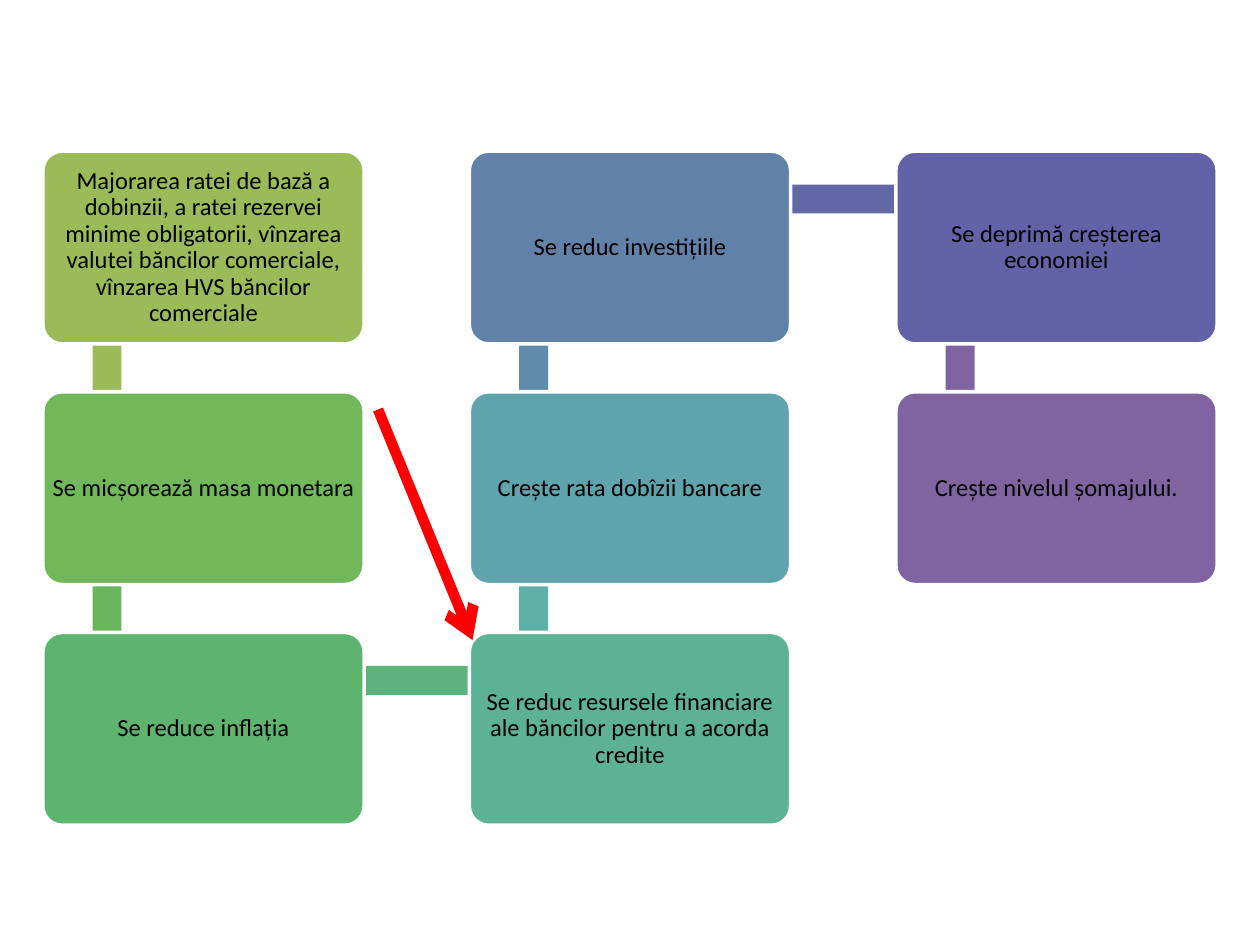
from dataclasses import dataclass
from itertools import zip_longest

import pptx
import pptx.dml.color
import pptx.enum.shapes
import pptx.enum.text
import pptx.oxml
import pptx.oxml.ns
import pptx.slide
import pptx.util

RGBColor = pptx.dml.color.RGBColor
Inches = pptx.util.Inches
Pt = pptx.util.Pt
ShapeKind = pptx.enum.shapes.MSO_SHAPE

BLACK = RGBColor(0x00, 0x00, 0x00)
WHITE = RGBColor(0xFF, 0xFF, 0xFF)
RED = RGBColor(0xFF, 0x00, 0x00)
OLIVE = RGBColor(0x9B, 0xBB, 0x59)
LEAF = RGBColor(0x70, 0xB8, 0x5A)
LEAF_LINK = RGBColor(0x69, 0xB7, 0x5B)
GREEN = RGBColor(0x5C, 0xB4, 0x6F)
GREEN_LINK = RGBColor(0x5C, 0xB3, 0x7C)
JADE = RGBColor(0x5D, 0xB1, 0x95)
JADE_LINK = RGBColor(0x5E, 0xAF, 0xA6)
TEAL = RGBColor(0x5F, 0xA4, 0xAD)
TEAL_LINK = RGBColor(0x60, 0x8C, 0xAB)
STEEL = RGBColor(0x61, 0x81, 0xA9)
STEEL_LINK = RGBColor(0x62, 0x67, 0xA6)
INDIGO = RGBColor(0x63, 0x62, 0xA6)
PURPLE = RGBColor(0x80, 0x64, 0xA2)

# Grid of steps, in inches
GRID_LEFT, GRID_TOP = 0.34, 1.2
COLUMN_PITCH, ROW_PITCH = 3.385, 1.91
STEP_WIDTH, STEP_HEIGHT = 2.55, 1.53
# Point inside each step where its links start and end
ANCHOR_X, ANCHOR_Y = 0.51, 0.38
LINK_THICKNESS = 0.23


@dataclass(frozen=True)
class Step:
    column: int
    row: int
    text: str
    fill: RGBColor
    link_fill: RGBColor = PURPLE

    @property
    def left(self) -> float:
        return GRID_LEFT + self.column * COLUMN_PITCH

    @property
    def top(self) -> float:
        return GRID_TOP + self.row * ROW_PITCH


STEPS = (
    Step(0, 0, "Majorarea ratei de bază a dobinzii, a ratei rezervei minime "
         "obligatorii, vînzarea valutei băncilor comerciale, vînzarea HVS "
         "băncilor comerciale", OLIVE, OLIVE),
    Step(0, 1, "Se micșorează masa monetara", LEAF, LEAF_LINK),
    Step(0, 2, "Se reduce inflația", GREEN, GREEN_LINK),
    Step(1, 2, "Se reduc resursele financiare ale băncilor pentru a acorda credite",
         JADE, JADE_LINK),
    Step(1, 1, "Crește rata dobîzii bancare", TEAL, TEAL_LINK),
    Step(1, 0, "Se reduc investițiile", STEEL, STEEL_LINK),
    Step(2, 0, "Se deprimă creșterea economiei", INDIGO, PURPLE),
    Step(2, 1, "Crește nivelul șomajului.", PURPLE),
)


def draw_link(slide: pptx.slide.Slide, start: Step, end: Step) -> None:
    """Draw the bar between the anchors of two neighbouring steps."""
    left = min(start.left, end.left) + ANCHOR_X
    top = min(start.top, end.top) + ANCHOR_Y
    if start.row == end.row:
        top -= LINK_THICKNESS / 2
        width, height = COLUMN_PITCH, LINK_THICKNESS
    else:
        left -= LINK_THICKNESS / 2
        width, height = LINK_THICKNESS, ROW_PITCH
    bar = slide.shapes.add_shape(
        ShapeKind.RECTANGLE, Inches(left), Inches(top), Inches(width), Inches(height))
    bar.shadow.inherit = False
    bar.fill.solid()
    bar.fill.fore_color.rgb = start.link_fill
    bar.line.fill.background()


def draw_step(slide: pptx.slide.Slide, step: Step) -> None:
    box = slide.shapes.add_shape(
        ShapeKind.ROUNDED_RECTANGLE, Inches(step.left), Inches(step.top),
        Inches(STEP_WIDTH), Inches(STEP_HEIGHT))
    box.adjustments[0] = 0.1
    box.shadow.inherit = False
    box.fill.solid()
    box.fill.fore_color.rgb = step.fill
    box.line.color.rgb = WHITE
    box.line.width = Pt(2)

    frame = box.text_frame
    frame.word_wrap = True
    frame.vertical_anchor = pptx.enum.text.MSO_ANCHOR.MIDDLE
    # The rounded corners already inset the text by about 0.04 inches
    frame.margin_left = frame.margin_right = Inches(0.01)
    frame.margin_top = frame.margin_bottom = Inches(0.01)
    paragraph = frame.paragraphs[0]
    paragraph.alignment = pptx.enum.text.PP_ALIGN.CENTER
    paragraph.line_spacing = 0.9
    run = paragraph.add_run()
    run.text = step.text
    run.font.name = "Calibri"
    run.font.size = Pt(14)
    run.font.color.rgb = BLACK


def draw_shortcut_arrow(slide: pptx.slide.Slide) -> None:
    """Draw the red arrow from the money supply to the banks' resources."""
    arrow = slide.shapes.add_connector(
        pptx.enum.shapes.MSO_CONNECTOR.STRAIGHT,
        Inches(3), Inches(3.25), Inches(3.75), Inches(5.08))
    arrow.line.color.rgb = RED
    arrow.line.width = Pt(6)
    namespace = pptx.oxml.ns.nsdecls("a")
    arrow.line._get_or_add_ln().append(
        pptx.oxml.parse_xml(f'<a:tailEnd {namespace} type="arrow"/>'))
    arrow._element.spPr.append(pptx.oxml.parse_xml(f"<a:effectLst {namespace}/>"))


def main() -> None:
    presentation = pptx.Presentation()
    presentation.slide_width = Inches(10)
    presentation.slide_height = Inches(7.5)
    slide = presentation.slides.add_slide(presentation.slide_layouts[6])
    for step, following in zip_longest(STEPS, STEPS[1:]):
        if following:
            draw_link(slide, step, following)
        draw_step(slide, step)
    draw_shortcut_arrow(slide)
    presentation.save("out.pptx")


if __name__ == "__main__":
    main()
